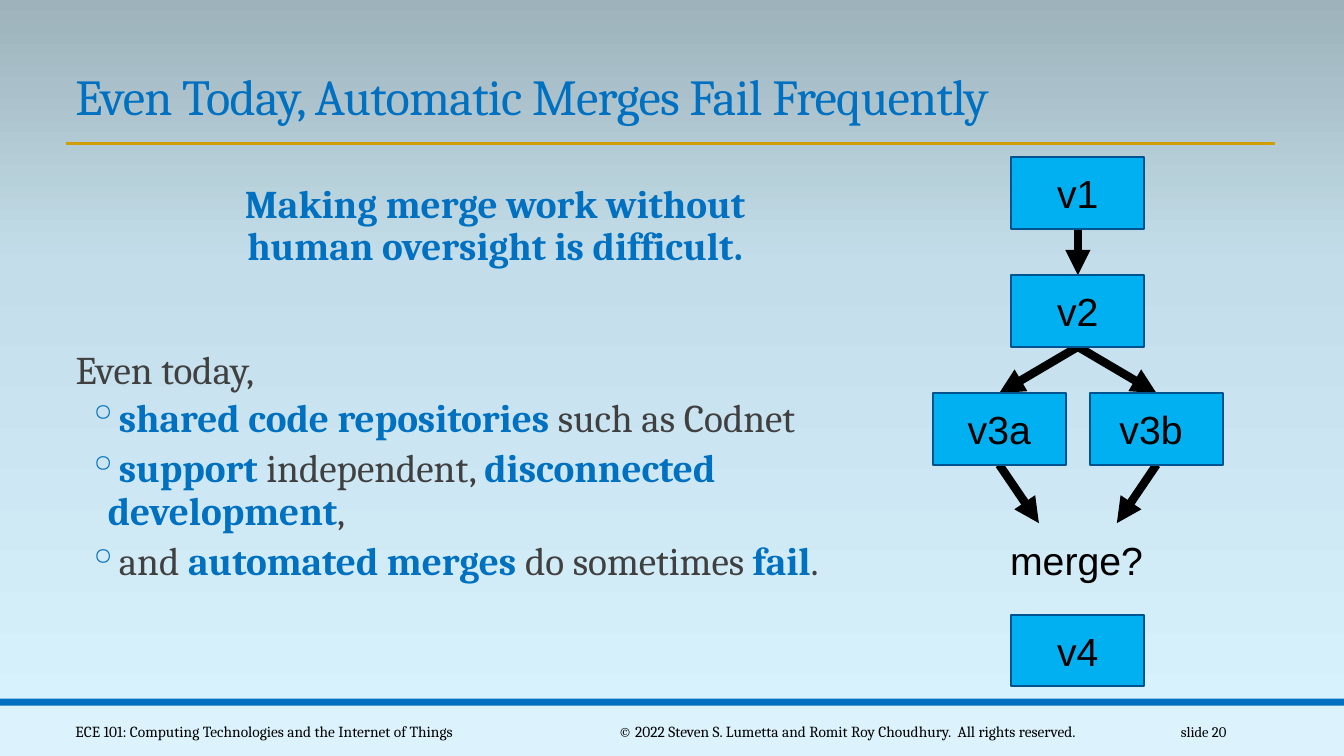
from copy import deepcopy
from dataclasses import dataclass
from typing import Optional

from lxml.etree import SubElement
from pptx import Presentation
from pptx.dml.color import RGBColor
from pptx.enum.shapes import MSO_CONNECTOR, MSO_SHAPE
from pptx.enum.text import MSO_ANCHOR, MSO_AUTO_SIZE, PP_ALIGN
from pptx.oxml.ns import qn
from pptx.util import Emu, Inches, Pt

BLUE = RGBColor(0x00, 0x70, 0xC0)
SKY = RGBColor(0x00, 0xB0, 0xF0)
NAVY = RGBColor(0x00, 0x53, 0x8E)
GOLD = RGBColor(0xD0, 0x9E, 0x00)
PALE = RGBColor(0xDC, 0xF3, 0xFD)
GREY = RGBColor(0x40, 0x40, 0x40)
BLACK = RGBColor(0x00, 0x00, 0x00)
FADE = [(0, RGBColor(0x9D, 0xB2, 0xBA)), (0.35, RGBColor(0xC3, 0xDE, 0xEA)),
        (1, RGBColor(0xDA, 0xF4, 0xFF))]

WIDE, HIGH = Inches(13.33), Inches(7.5)
SERIF, SANS = "Cambria", "Arial"
LEFT, CENTER, RIGHT = PP_ALIGN.LEFT, PP_ALIGN.CENTER, PP_ALIGN.RIGHT

# Version tree, in percent of the slide
AXIS, SIDE, TOP, STEP = 80.2, 5.85, 20.8, 15.6
BOX_W, BOX_H = 9.9, 9.47


@dataclass
class Label:
    text: str
    x: float
    y: float
    w: float
    h: float
    size: float
    font: str = SERIF
    color: RGBColor = BLACK
    align: PP_ALIGN = LEFT
    anchor: MSO_ANCHOR = MSO_ANCHOR.MIDDLE
    wrap: bool = True


@dataclass
class Node:
    name: str
    mid: float
    row: float


@dataclass
class Link:
    start: str
    end: Optional[str] = None
    tip: tuple[float, float] = (AXIS, TOP)


@dataclass
class Line:
    runs: list[tuple[str, bool]]
    align: PP_ALIGN = LEFT
    mark: bool = False
    before: float = 0
    after: float = 2


LABELS = [
    Label("Even Today, Automatic Merges Fail Frequently", 4.88, 7.87, 90.1, 9.47,
          36, color=BLUE, anchor=MSO_ANCHOR.BOTTOM),
    Label("slide 20", 81.25, 94.13, 10.73, 5.33, 10.5, align=RIGHT),
    Label("ECE 101: Computing Technologies and the Internet of Things",
          4.88, 94.13, 34.36, 5.33, 11),
    Label("© 2022 Steven S. Lumetta and Romit Roy Choudhury.  All rights reserved.",
          40.96, 94.13, 44.19, 5.33, 11, align=CENTER),
    Label("merge?", 74.42, 70.27, 11.55, 7.6, 28, SANS,
          anchor=MSO_ANCHOR.TOP, wrap=False),
]
NODES = [Node("v1", AXIS, 0), Node("v2", AXIS, 1), Node("v3a", AXIS - SIDE, 2),
         Node("v3b ", AXIS + SIDE, 2), Node("v4", AXIS, 3.88)]
LINKS = [Link("v1", "v2"), Link("v2", "v3a"), Link("v2", "v3b "),
         Link("v3a", tip=(AXIS - 2.9, 69.2)), Link("v3b ", tip=(AXIS + 2.9, 69.2))]
LINES = [
    Line([("Making merge work without\nhuman oversight is difficult.", True)], CENTER),
    Line([("Even today,", False)], before=56),
    Line([("shared code repositories", True), (" such as Codnet", False)],
         mark=True, before=2, after=4),
    Line([("support", True), (" independent, ", False),
          ("disconnected development", True), (",", False)],
         mark=True, before=2, after=4),
    Line([("and ", False), ("automated merges", True), (" do sometimes ", False),
          ("fail", True), (".", False)], mark=True, before=2, after=4),
]


def across(part: float) -> Emu:
    return Emu(round(WIDE * part / 100))


def down(part: float) -> Emu:
    return Emu(round(HIGH * part / 100))


def place(x: float, y: float, w: float, h: float) -> tuple:
    return across(x), down(y), across(w), down(h)


def add_run(para, text: str, size: float, font: str, color: RGBColor, bold=False):
    run = para.add_run()
    run.text = text
    run.font.size, run.font.name, run.font.bold = Pt(size), font, bold
    run.font.color.rgb = color
    return run


def add_rect(slide, spot: tuple, fill: RGBColor, edge: Optional[RGBColor] = None):
    rect = slide.shapes.add_shape(MSO_SHAPE.RECTANGLE, *spot)
    rect.shadow.inherit = False
    rect.fill.solid()
    rect.fill.fore_color.rgb = fill
    if edge is None:
        rect.line.fill.background()
    else:
        rect.line.color.rgb, rect.line.width = edge, Pt(1.25)
    return rect


def add_line(slide, ends: tuple, color: RGBColor, width: float):
    line = slide.shapes.add_connector(MSO_CONNECTOR.STRAIGHT, *ends)
    line.line.color.rgb, line.line.width = color, Pt(width)
    SubElement(line.element.spPr, qn("a:effectLst"))
    return line


def add_label(slide, label: Label):
    box = slide.shapes.add_textbox(*place(label.x, label.y, label.w, label.h))
    frame = box.text_frame
    frame.word_wrap, frame.vertical_anchor = label.wrap, label.anchor
    if not label.wrap:
        frame.auto_size = MSO_AUTO_SIZE.SHAPE_TO_FIT_TEXT
    para = frame.paragraphs[0]
    para.alignment = label.align
    run = add_run(para, label.text, label.size, label.font, label.color)
    if label.size == 36:
        para.line_spacing = 0.85
        run.font._element.set("spc", "-50")


def add_body(slide, lines: list[Line]):
    frame = slide.shapes.add_textbox(*place(4.88, 23.73, 63.92, 61.87)).text_frame
    frame.word_wrap = True
    frame.margin_left = frame.margin_right = 0
    for i, line in enumerate(lines):
        para = frame.add_paragraph() if i else frame.paragraphs[0]
        para.alignment, para.line_spacing = line.align, 0.9
        para.space_before, para.space_after = Pt(line.before), Pt(line.after)
        props = para._p.get_or_add_pPr()
        if line.mark:
            props.set("marL", str(Inches(0.42)))
            props.set("indent", str(-Inches(0.2)))
            tint = SubElement(props, qn("a:buClr"))
            SubElement(tint, qn("a:srgbClr"), val=str(BLUE))
            SubElement(props, qn("a:buChar"), char="◦")
        elif line.align == LEFT:
            props.set("marL", str(Inches(0.1)))
        for text, bold in line.runs:
            for k, part in enumerate(text.split("\n")):
                if k:
                    para.add_line_break()
                add_run(para, part, 28, SERIF, BLUE if bold else GREY, bold)


def add_node(slide, node: Node):
    spot = place(node.mid - BOX_W / 2, TOP + node.row * STEP, BOX_W, BOX_H)
    box = add_rect(slide, spot, SKY, NAVY)
    box.text_frame.vertical_anchor = MSO_ANCHOR.MIDDLE
    para = box.text_frame.paragraphs[0]
    para.alignment = CENTER
    add_run(para, node.name, 28, SANS, BLACK)
    return box


def add_link(slide, link: Link, boxes: dict):
    tip = across(link.tip[0]), down(link.tip[1])
    arrow = add_line(slide, (*tip, *tip), BLACK, 6)
    arrow.begin_connect(boxes[link.start], 2)
    if link.end:
        arrow.end_connect(boxes[link.end], 0)
    SubElement(arrow.line._get_or_add_ln(), qn("a:tailEnd"), type="triangle")
    boxes["v1"].element.addprevious(arrow.element)  # arrows lie under the boxes


def add_fade(slide):
    fill = slide.background.fill
    fill.gradient()
    fill.gradient_angle = 270
    stops = slide.element.find(".//" + qn("a:gsLst"))
    stops.append(deepcopy(stops[0]))
    for stop, (at, color) in zip(fill.gradient_stops, FADE):
        stop.position, stop.color.rgb = at, color


def main():
    deck = Presentation()
    deck.slide_width, deck.slide_height = WIDE, HIGH
    slide = deck.slides.add_slide(deck.slide_layouts[6])
    # Backdrop, footer band and title rule
    add_fade(slide)
    add_rect(slide, place(0, 93.33, 100, 6.67), PALE)
    add_rect(slide, place(0, 92.4, 100, 0.93), BLUE)
    add_line(slide, place(4.88, 18.93, 94.9, 18.93), GOLD, 2)
    # Text
    for label in LABELS:
        add_label(slide, label)
    add_body(slide, LINES)
    # Version tree
    boxes = {node.name: add_node(slide, node) for node in NODES}
    for link in LINKS:
        add_link(slide, link, boxes)
    deck.save("out.pptx")


if __name__ == "__main__":
    main()
